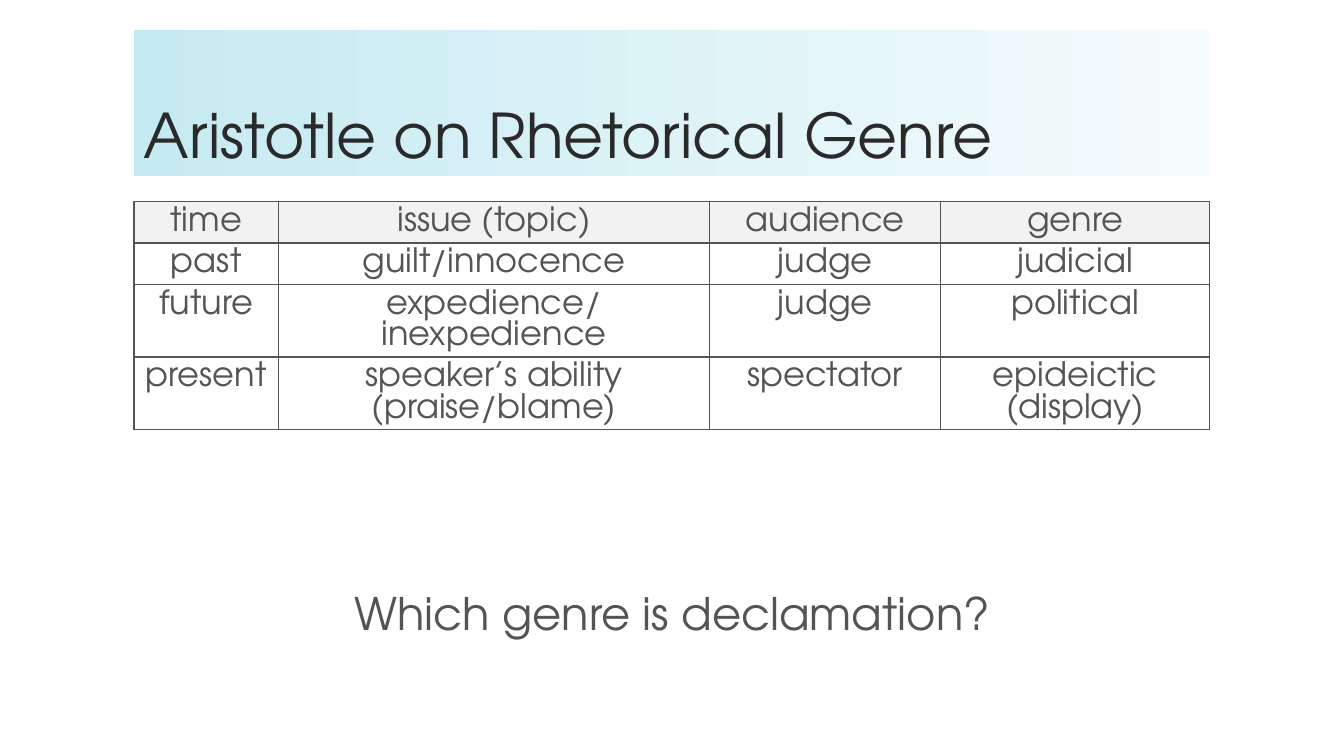
"""Build the slide on Aristotle's rhetorical genres."""
from dataclasses import dataclass

from lxml import etree
from pptx import Presentation
from pptx import util as u
from pptx.dml.color import RGBColor
from pptx.enum import shapes, text
from pptx.oxml.ns import qn


@dataclass(frozen=True)
class Theme:
    """Colours, font and type sizes of the slide."""
    font: str = "TeX Gyre Adventor"
    title: str = "2A2A2A"
    body: str = "545454"
    header: str = "F2F2F2"
    band: tuple = ("F5FCFD", "C6EAF1")
    title_size: int = 44
    question_size: int = 32
    table_size: int = 24


class Deck:
    """Draws styled elements on the current slide."""

    def __init__(self, prs, theme):
        """Add a blank slide to the presentation."""
        self.theme = theme
        self.slide = prs.slides.add_slide(prs.slide_layouts[6])

    def add_text(self, tf, words, size, color, align, spacing=None):
        """Fill one paragraph, with a line break at each newline."""
        p = tf.paragraphs[0]
        p.alignment = align
        if spacing:
            p.line_spacing = spacing
        for i, line in enumerate(words.split("\n")):
            if i:
                p.add_line_break()
            r = p.add_run()
            r.text = line
            r.font.name = self.theme.font
            r.font.size = u.Pt(size)
            r.font.color.rgb = RGBColor.from_string(color)

    def title(self, words, box):
        """Draw the title on its gradient band."""
        sp = self.slide.shapes.add_shape(shapes.MSO_SHAPE.RECTANGLE, *map(u.Inches, box))
        sp.shadow.inherit = False
        sp.line.fill.background()
        sp.fill.gradient()
        sp.fill.gradient_angle = 180
        for stop, color in zip(sp.fill.gradient_stops, self.theme.band):
            stop.color.rgb = RGBColor.from_string(color)
        tf = sp.text_frame
        tf.word_wrap = True
        tf.vertical_anchor = text.MSO_ANCHOR.BOTTOM
        self.add_text(tf, words, self.theme.title_size, self.theme.title, text.PP_ALIGN.LEFT, 0.9)

    def question(self, words, box):
        """Draw the centred closing question."""
        tf = self.slide.shapes.add_textbox(*map(u.Inches, box)).text_frame
        tf.word_wrap = False
        tf.auto_size = text.MSO_AUTO_SIZE.SHAPE_TO_FIT_TEXT
        tf.vertical_anchor = text.MSO_ANCHOR.BOTTOM
        self.add_text(tf, words, self.theme.question_size, self.theme.body, text.PP_ALIGN.CENTER, 0.9)

    def borders(self, cell):
        """Rule all four sides of a cell."""
        tc_pr = cell._tc.get_or_add_tcPr()
        for side in ("lnL", "lnR", "lnT", "lnB"):
            ln = etree.SubElement(tc_pr, qn(f"a:{side}"), w=str(u.Pt(1)))
            fill = etree.SubElement(ln, qn("a:solidFill"))
            etree.SubElement(fill, qn("a:srgbClr"), val=self.theme.body)

    def table(self, rows, widths, heights, left, top):
        """Draw a ruled table with a shaded header row."""
        size = map(u.Inches, (left, top, sum(widths), sum(heights)))
        table = self.slide.shapes.add_table(len(rows), len(widths), *size).table
        table.first_row = table.horz_banding = False
        for column, width in zip(table.columns, widths):
            column.width = u.Inches(width)
        for i, (row, height) in enumerate(zip(rows, heights)):
            table.rows[i].height = u.Inches(height)
            for j, words in enumerate(row):
                cell = table.cell(i, j)
                self.borders(cell)
                if i == 0:
                    cell.fill.solid()
                    cell.fill.fore_color.rgb = RGBColor.from_string(self.theme.header)
                else:
                    cell.fill.background()
                self.add_text(cell.text_frame, words, self.theme.table_size,
                              self.theme.body, text.PP_ALIGN.CENTER)


GENRES = [
    ("time", "issue (topic)", "audience", "genre"),
    ("past", "guilt/innocence", "judge", "judicial"),
    ("future", "expedience/\ninexpedience", "judge", "political"),
    ("present", "speaker’s ability (praise/blame)", "spectator", "epideictic (display)"),
]


def main():
    """Build and save the slide."""
    prs = Presentation()
    prs.slide_width, prs.slide_height = u.Inches(13.33), u.Inches(7.5)
    deck = Deck(prs, Theme())
    deck.title("Aristotle on Rhetorical Genre", (1.33, 0.3, 10.67, 1.45))
    deck.table(GENRES, (1.43, 4.28, 2.29, 2.67), (0.41, 0.41, 0.72, 0.72), 1.33, 2)
    deck.question("Which genre is declamation?", (3.38, 5.81, 6.58, 0.59))
    prs.save("out.pptx")


if __name__ == "__main__":
    main()
